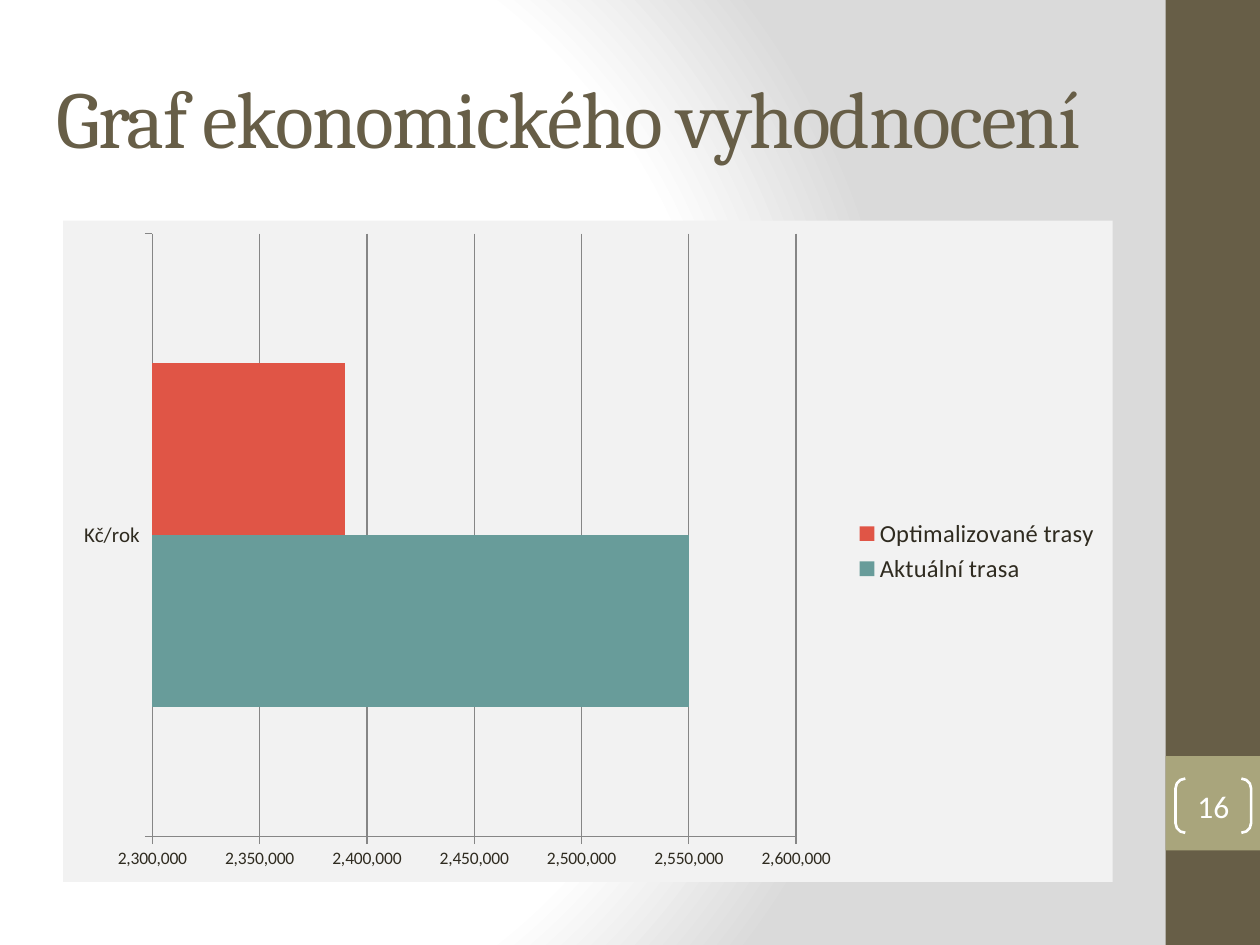
from lxml import etree
from pptx import Presentation
from pptx.chart.data import CategoryChartData
from pptx.dml.color import RGBColor
from pptx.enum.chart import XL_CHART_TYPE as ChartType, XL_LEGEND_POSITION as LegendPosition, XL_TICK_MARK as TickMark
from pptx.enum.shapes import MSO_SHAPE as Shape
from pptx.enum.text import MSO_ANCHOR as Anchor, MSO_AUTO_SIZE as AutoSize, PP_ALIGN as Align
from pptx.oxml import parse_xml
from pptx.oxml.ns import nsdecls
from pptx.util import Inches, Pt

BROWN, OLIVE, WHITE, INK, GRID = "675E47", "A9A57C", "FFFFFF", "2F2B20", "868686"
SERIES = [("Aktuální trasa", 2550000, "689C9A"), ("Optimalizované trasy", 2390000, "E05546")]


def color(value):
    return RGBColor.from_string(value)


def inches(box):
    return [Inches(length) for length in box]


def format_font(font, size, value, name="Calibri"):
    font.size, font.name = Pt(size), name
    font.color.rgb = color(value)


def write_text(shape, text, size, value, name="Calibri", align=Align.LEFT, spacing=0, margin=None):
    frame = shape.text_frame
    frame.word_wrap = True
    frame.auto_size = AutoSize.NONE
    frame.vertical_anchor = Anchor.MIDDLE
    if margin is not None:
        frame.margin_left = frame.margin_right = Inches(margin)
        frame.margin_top = frame.margin_bottom = Inches(margin)
    paragraph = frame.paragraphs[0]
    paragraph.alignment = align
    run = paragraph.add_run()
    run.text = text
    format_font(run.font, size, value, name)
    if spacing:
        run.font._element.set("spc", str(spacing * 100))


def add_background(slide):
    stops = "".join(
        f'<a:gs pos="{position * 1000}"><a:srgbClr val="{value}"/></a:gs>'
        for position, value in [(0, WHITE), (75, WHITE), (100, "DADADA")]
    )
    background = parse_xml(
        f'<p:bg {nsdecls("p", "a")}><p:bgPr><a:gradFill rotWithShape="1"><a:gsLst>{stops}</a:gsLst>'
        '<a:path path="circle"><a:fillToRect l="20000" t="50000" r="100000" b="50000"/></a:path>'
        "</a:gradFill><a:effectLst/></p:bgPr></p:bg>"
    )
    slide.element.cSld.insert(0, background)


def add_block(slide, box, fill):
    block = slide.shapes.add_shape(Shape.RECTANGLE, *inches(box))
    block.shadow.inherit = False
    block.fill.solid()
    block.fill.fore_color.rgb = color(fill)
    block.line.fill.background()


def add_sidebar(slide, box, number):
    left, top, width, height = box
    add_block(slide, box, BROWN)
    add_block(slide, (left, top + 6, width, width), OLIVE)
    bracket = slide.shapes.add_shape(Shape.DOUBLE_BRACKET, *inches((left + 0.08, top + 6.18, 0.6, 0.43)))
    bracket.shadow.inherit = False
    bracket.adjustments[0] = 0.18
    bracket.fill.background()
    bracket.line.color.rgb = color(WHITE)
    bracket.line.width = Pt(1.5)
    write_text(bracket, number, 18, WHITE, align=Align.CENTER, margin=0)


def add_title(slide, box, text):
    title = slide.shapes.title
    title.left, title.top, title.width, title.height = inches(box)
    write_text(title, text, 46, BROWN, name="Cambria", spacing=-1)


def format_axis(axis, size):
    axis.major_tick_mark = TickMark.OUTSIDE
    axis.minor_tick_mark = TickMark.NONE
    axis.format.line.color.rgb = color(GRID)
    format_font(axis.tick_labels.font, size, INK)


def fill_chart_area(chart, fill):
    area = parse_xml(
        f'<c:spPr {nsdecls("c", "a")}><a:solidFill><a:srgbClr val="{fill}"/></a:solidFill>'
        "<a:ln><a:noFill/></a:ln></c:spPr>"
    )
    chart.element.chart.addnext(area)


def add_cost_chart(slide, box):
    data = CategoryChartData(number_format="#,##0")
    data.categories = ["Kč/rok"]
    for name, value, _ in SERIES:
        data.add_series(name, [value])
    chart = slide.shapes.add_chart(ChartType.BAR_CLUSTERED, *inches(box), data).chart
    format_font(chart.font, 10, INK)
    chart.has_title = False
    fill_chart_area(chart, "F2F2F2")

    plot = chart.plots[0]
    plot.gap_width, plot.overlap, plot.vary_by_categories = 150, 0, False
    for series, (_, _, fill) in zip(plot.series, SERIES):
        series.format.fill.solid()
        series.format.fill.fore_color.rgb = color(fill)

    format_axis(chart.category_axis, 12)
    values = chart.value_axis
    format_axis(values, 10)
    values.minimum_scale, values.maximum_scale, values.major_unit = 2300000, 2600000, 50000
    values.has_major_gridlines = True
    values.major_gridlines.format.line.color.rgb = color(GRID)
    values.tick_labels.number_format = "#,##0"
    values.tick_labels.number_format_is_linked = False

    chart.has_legend = True
    chart.legend.position = LegendPosition.RIGHT
    chart.legend.include_in_layout = False
    format_font(chart.legend.font, 14, INK)


def main():
    presentation = Presentation()
    presentation.slide_width, presentation.slide_height = Inches(10), Inches(7.5)
    slide = presentation.slides.add_slide(presentation.slide_layouts[5])
    add_background(slide)
    add_sidebar(slide, (9.25, 0, 0.75, 7.5), "16")
    add_title(slide, (0.35, 0.3, 8.74, 1.25), "Graf ekonomického vyhodnocení")
    add_cost_chart(slide, (0.5, 1.75, 8.33, 5.25))
    presentation.save("out.pptx")


if __name__ == "__main__":
    main()
